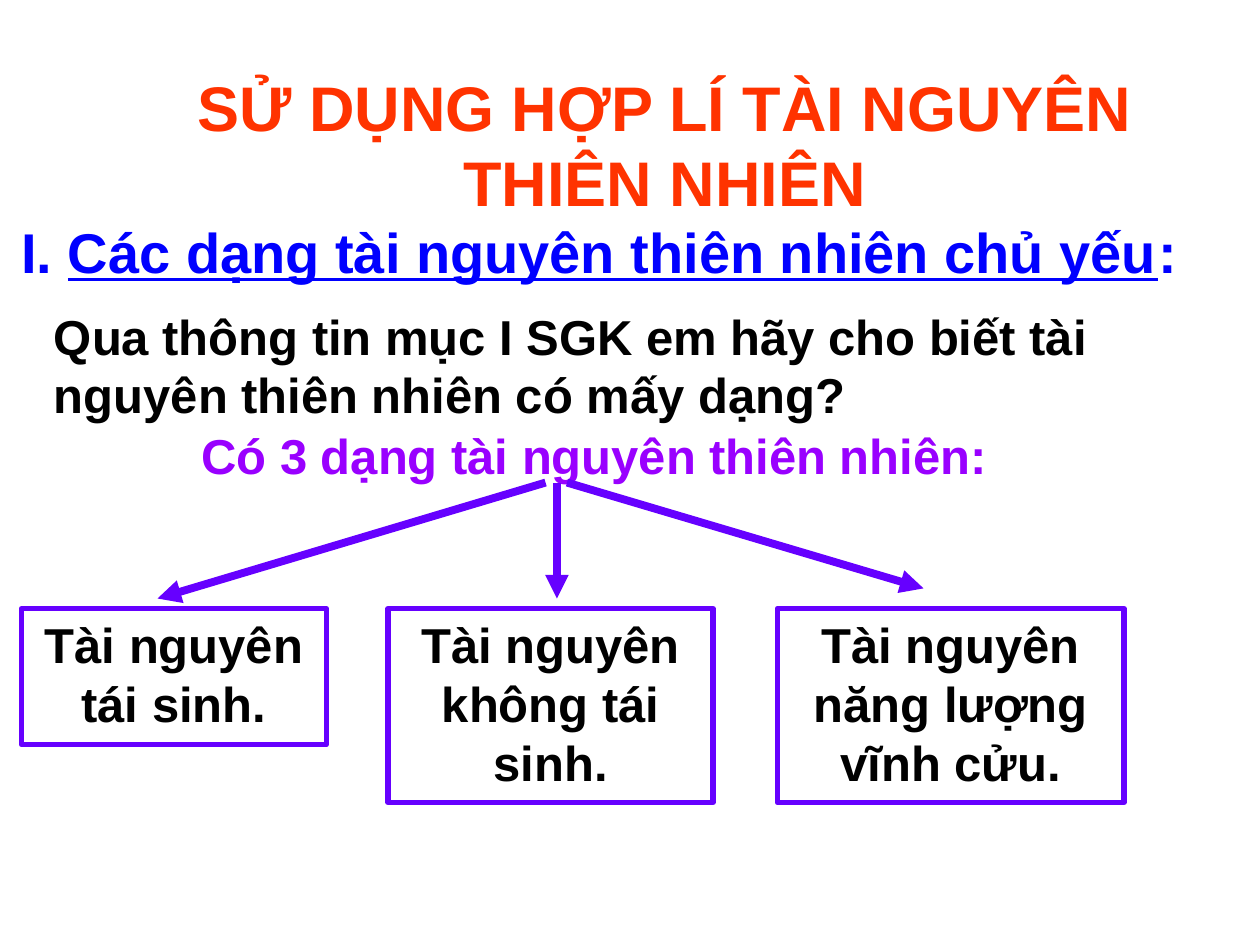
from lxml.etree import SubElement
from pptx import Presentation
from pptx.dml.color import RGBColor
from pptx.enum.shapes import MSO_CONNECTOR, MSO_SHAPE
from pptx.enum.text import MSO_ANCHOR, MSO_AUTO_SIZE, PP_ALIGN
from pptx.oxml.ns import qn
from pptx.util import Inches, Pt

HUES = {"title": "FF3300", "head": "0000FF", "text": "000000",
        "answer": "9900FF", "line": "6600FF"}
TITLE = "SỬ DỤNG HỢP LÍ TÀI NGUYÊN THIÊN NHIÊN"
HEAD = ["I. ", "Các dạng tài nguyên thiên nhiên chủ yếu", ":"]
NOTES = [
    ("Qua thông tin mục I SGK em hãy cho biết tài nguyên thiên nhiên có mấy dạng?",
     (0.33, 2.38, 9.42, 1.03), "text"),
    ("Có 3 dạng tài nguyên thiên nhiên:", (1.5, 3.33, 6.67, 0.57), "answer"),
]
KINDS = [
    ("Tài nguyên tái sinh.", 0.17, 2.42, 1.08),
    ("Tài nguyên không tái sinh.", 3.08, 2.58, 1.54),
    ("Tài nguyên năng lượng vĩnh cửu.", 6.17, 2.75, 1.54),
]
ARROWS = [(4.5, 7.33, 4.67), (4.42, 4.42, 4.75), (4.33, 1.25, 4.75)]
BOX_TOP = 4.83
ARROW_TOP = 3.83


def hue(name):
    return RGBColor.from_string(HUES[name])


def style(shape, size, name, align=PP_ALIGN.LEFT):
    frame = shape.text_frame
    frame.word_wrap = True
    frame.auto_size = MSO_AUTO_SIZE.NONE
    frame.vertical_anchor = MSO_ANCHOR.TOP
    para = frame.paragraphs[0]
    para.alignment = align
    font = para.font
    font.name, font.size, font.bold = "Arial", Pt(size), True
    font.color.rgb = hue(name)
    return para


def add_text(slide, place):
    return slide.shapes.add_textbox(*map(Inches, place))


def add_kind(slide, text, left, width, height):
    box = slide.shapes.add_shape(
        MSO_SHAPE.RECTANGLE, *map(Inches, (left, BOX_TOP, width, height)))
    box.shadow.inherit = False
    box.fill.background()
    box.line.color.rgb = hue("line")
    box.line.width = Pt(3)
    box.text_frame.text = text
    style(box, 28, "text", PP_ALIGN.CENTER)


def add_arrow(slide, start, end, foot):
    arrow = slide.shapes.add_connector(
        MSO_CONNECTOR.STRAIGHT, *map(Inches, (start, ARROW_TOP, end, foot)))
    arrow.line.color.rgb = hue("line")
    arrow.line.width = Pt(4.5)
    SubElement(arrow.line._get_or_add_ln(), qn("a:tailEnd"), type="triangle")
    SubElement(arrow._element.spPr, qn("a:effectLst"))


def main():
    deck = Presentation()
    deck.slide_width, deck.slide_height = Inches(10), Inches(7.5)
    slide = deck.slides.add_slide(deck.slide_layouts[5])

    title = slide.shapes.title
    title.left, title.top, title.width, title.height = map(
        Inches, (0.69, 0.49, 9.17, 1.3))
    title.text_frame.text = TITLE
    style(title, 36, "title", PP_ALIGN.CENTER)

    para = style(add_text(slide, (0.07, 1.78, 9.93, 0.53)), 32, "head")
    para.line_spacing = 0.8
    for part in HEAD:
        run = para.add_run()
        run.text = part
        run.font.underline = part == HEAD[1]

    for text, place, name in NOTES:
        note = add_text(slide, place)
        note.text_frame.text = text
        style(note, 28, name)
    for kind in KINDS:
        add_kind(slide, *kind)
    for arrow in ARROWS:
        add_arrow(slide, *arrow)
    deck.save("out.pptx")


if __name__ == "__main__":
    main()
